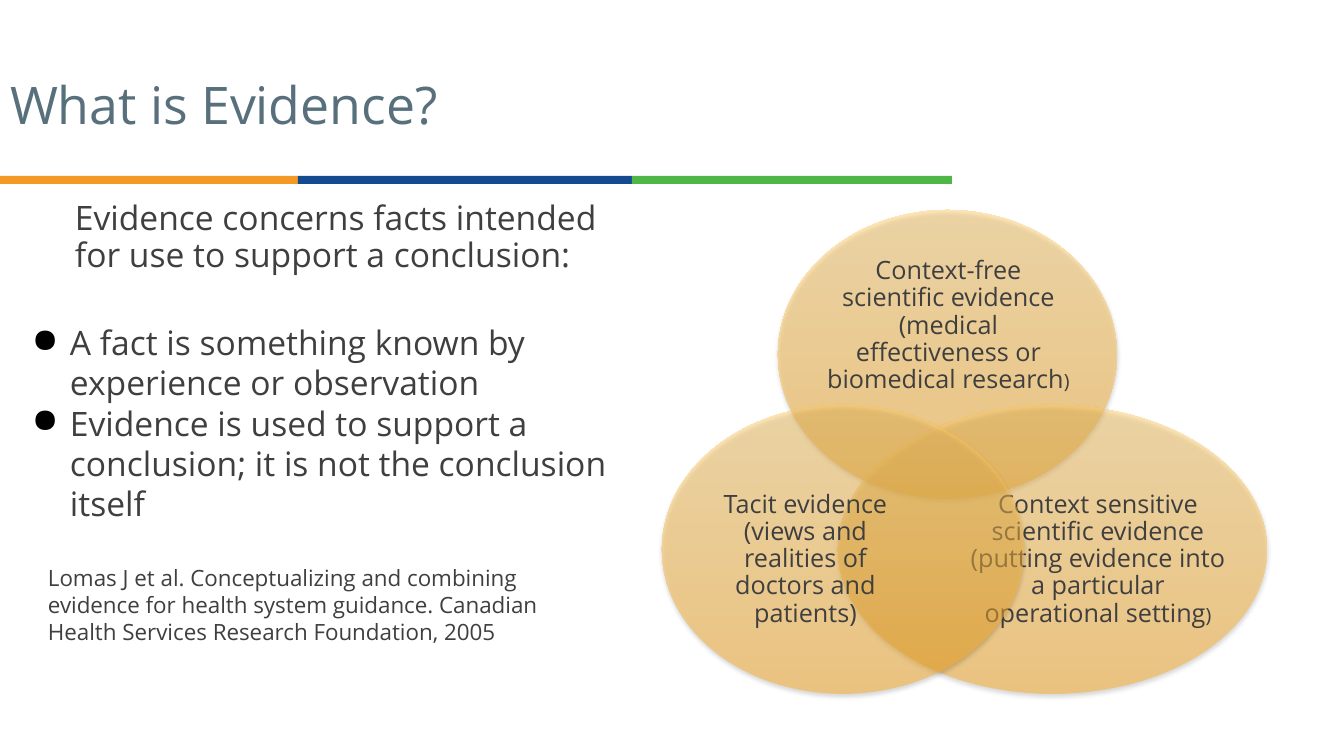
from dataclasses import dataclass

from lxml.etree import SubElement
from pptx import Presentation
from pptx.dml.color import RGBColor
from pptx.enum.shapes import MSO_SHAPE
from pptx.enum.text import MSO_ANCHOR, MSO_AUTO_SIZE, PP_ALIGN
from pptx.oxml import parse_xml
from pptx.oxml.ns import nsdecls, qn
from pptx.util import Pt

# Content: lengths in px, boxes as left, top, width, height
TITLE = "What is Evidence?"
TITLE_BOX = (0, 48, 906, 119)
BODY_BOX = (21, 197, 600, 499)
INTRO = "Evidence concerns facts intended for use to support a conclusion:"
FACTS = [
    "A fact is something known by experience or observation",
    "Evidence is used to support a conclusion; it is not the conclusion itself",
]
CITATION = [
    "Lomas J et al. Conceptualizing and combining",
    "evidence for health system guidance. Canadian",
    "Health Services Research Foundation, 2005",
]
RULE_TOP, RULE_HEIGHT = 176, 8
RULE_EDGES = [0, 298, 632, 952]
# (main text, smaller closing text, ellipse box, label box), back to front
EVIDENCE_KINDS = [
    ("Context-free scientific evidence (medical effectiveness or biomedical research", ")",
     (778, 210, 339, 289), (824, 261, 249, 130)),
    ("Context sensitive scientific evidence (putting evidence into a particular "
     "operational setting", ")",
     (838, 405, 429, 289), (969, 480, 258, 159)),
    ("Tacit evidence (views and realities of doctors and patients)", "",
     (662, 405, 362, 289), (697, 480, 217, 159)),
]


@dataclass(frozen=True)
class Theme:
    font: str = "Open Sans"
    title: str = "586F7C"
    text: str = "3F3F3F"
    bullet: str = "000000"
    rule: tuple = ("F49925", "154A90", "4EB748")
    venn_bottom: str = "FFAD22"
    venn_top: str = "FFCE6C"
    venn_alpha: int = 47
    title_size: int = 37
    body_size: int = 24
    citation_size: int = 16
    label_size: int = 18
    closing_size: int = 14


THEME = Theme()
EMU_PER_PX = 914400 / 100.8


def px(length):
    return round(length * EMU_PER_PX)


def place(box):
    return [px(length) for length in box]


def style(paragraph, size, color=THEME.text, align=PP_ALIGN.LEFT, spacing=1.0):
    paragraph.alignment = align
    paragraph.line_spacing = spacing
    paragraph.space_before = Pt(0)
    paragraph.font.name = THEME.font
    paragraph.font.size = Pt(size)
    paragraph.font.color.rgb = RGBColor.from_string(color)


def indent(paragraph, left, first=0, bullet=None):
    props = paragraph._p.get_or_add_pPr()
    props.set("marL", str(px(left)))
    props.set("indent", str(px(first)))
    if bullet:
        color = SubElement(props, qn("a:buClr"))
        SubElement(color, qn("a:srgbClr"), val=THEME.bullet)
        SubElement(props, qn("a:buChar"), char=bullet)


def add_text_frame(box):
    frame = slide.shapes.add_textbox(*place(box)).text_frame
    frame.word_wrap = True
    return frame


def add_ellipse(box):
    ellipse = slide.shapes.add_shape(MSO_SHAPE.OVAL, *place(box))
    ellipse.line.fill.background()
    stops = "".join(
        f'<a:gs pos="{pos}"><a:srgbClr val="{color}">'
        f'<a:alpha val="{THEME.venn_alpha * 1000}"/></a:srgbClr></a:gs>'
        for pos, color in ((0, THEME.venn_bottom), (100000, THEME.venn_top)))
    gradient = parse_xml(
        f'<a:gradFill {nsdecls("a")} rotWithShape="1"><a:gsLst>{stops}</a:gsLst>'
        '<a:lin ang="16200000" scaled="0"/></a:gradFill>')
    shadow = parse_xml(
        f'<a:effectLst {nsdecls("a")}><a:outerShdw blurRad="{Pt(3.1)}" dist="{Pt(1.8)}" '
        'dir="5400000" rotWithShape="0"><a:srgbClr val="000000"><a:alpha val="33000"/>'
        '</a:srgbClr></a:outerShdw></a:effectLst>')
    props = ellipse._element.spPr
    props.find(qn("a:prstGeom")).addnext(gradient)
    props.append(shadow)


presentation = Presentation()
presentation.slide_width, presentation.slide_height = px(1344), px(756)
slide = presentation.slides.add_slide(presentation.slide_layouts[5])

# Title
title = slide.shapes.title
title.left, title.top, title.width, title.height = place(TITLE_BOX)
title.text_frame.text = TITLE
title.text_frame.auto_size = MSO_AUTO_SIZE.NONE
title.text_frame.vertical_anchor = MSO_ANCHOR.MIDDLE
style(title.text_frame.paragraphs[0], THEME.title_size, THEME.title, spacing=0.9)

# Three-colour rule under the title
for left, right, color in zip(RULE_EDGES, RULE_EDGES[1:], THEME.rule):
    band = slide.shapes.add_shape(
        MSO_SHAPE.RECTANGLE, *place((left, RULE_TOP, right - left, RULE_HEIGHT)))
    band.fill.solid()
    band.fill.fore_color.rgb = RGBColor.from_string(color)
    band.line.fill.background()
    band.shadow.inherit = False

# Intro, facts and citation
body = add_text_frame(BODY_BOX)
intro = body.paragraphs[0]
intro.text = INTRO
indent(intro, 44)
style(intro, THEME.body_size, spacing=0.9)
for lines, size, first, bullet, gap in (
        (FACTS, THEME.body_size, -38, "●", 34),
        (CITATION, THEME.citation_size, -22, None, 29)):
    for number, line in enumerate(lines):
        paragraph = body.add_paragraph()
        paragraph.text = line
        indent(paragraph, 39, first, bullet)
        style(paragraph, size)
        if number == 0:
            paragraph.space_before = Pt(gap)

# Overlapping kinds of evidence
for text, closing, ellipse_box, label_box in EVIDENCE_KINDS:
    add_ellipse(ellipse_box)
    label = add_text_frame(label_box)
    label.margin_left = label.margin_right = label.margin_top = label.margin_bottom = 0
    label.vertical_anchor = MSO_ANCHOR.MIDDLE
    paragraph = label.paragraphs[0]
    paragraph.text = text
    style(paragraph, THEME.label_size, align=PP_ALIGN.CENTER, spacing=0.9)
    if closing:
        end = paragraph.add_run()
        end.text = closing
        end.font.size = Pt(THEME.closing_size)

presentation.save("out.pptx")
